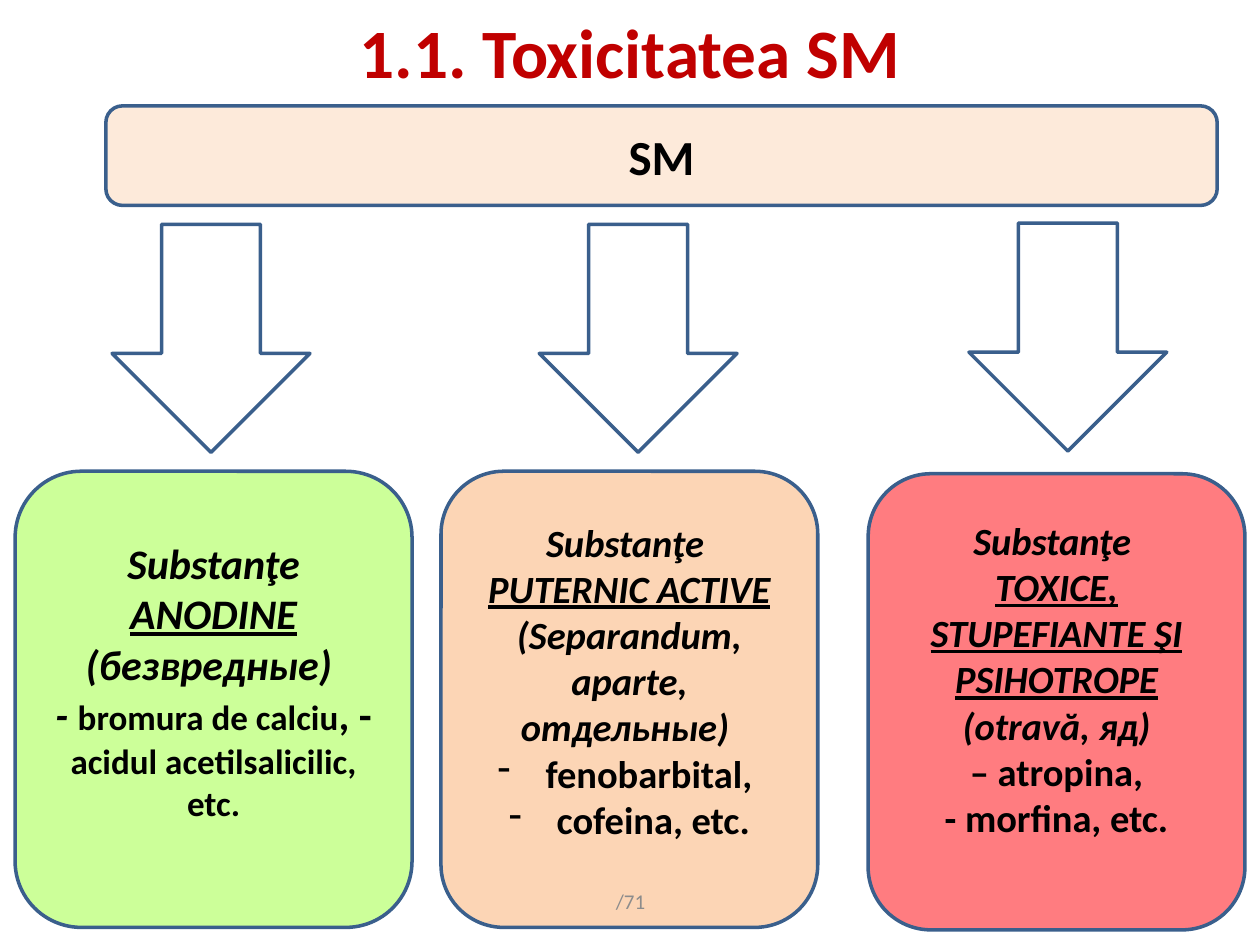
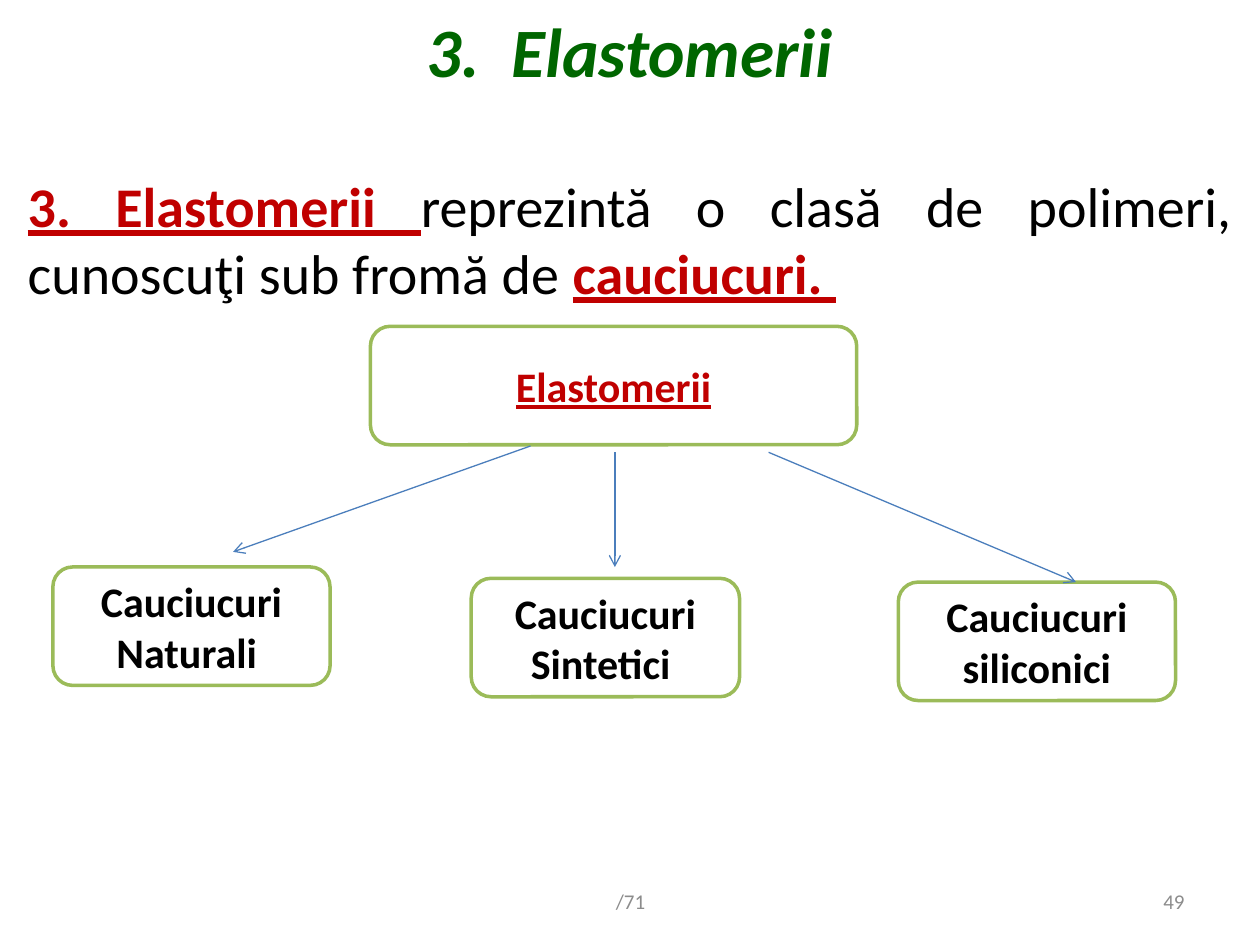
from lxml import etree
from pptx import Presentation
from pptx.dml.color import RGBColor
from pptx.enum.shapes import MSO_CONNECTOR, MSO_SHAPE as SHAPE
from pptx.enum.text import MSO_ANCHOR as ANCHOR, MSO_AUTO_SIZE as AUTO, PP_ALIGN as ALIGN
from pptx.oxml.ns import qn
from pptx.util import Inches, Pt

FONT = "Calibri"
BLACK = RGBColor(0x00, 0x00, 0x00)
WHITE = RGBColor(0xFF, 0xFF, 0xFF)
RED = RGBColor(0xC0, 0x00, 0x00)
DARK_GREEN = RGBColor(0x00, 0x66, 0x00)
GREY = RGBColor(0x8C, 0x8C, 0x8C)
BLUE_LINE = RGBColor(0x3A, 0x5F, 0x8C)
ARROW_BLUE = RGBColor(0x4B, 0x7E, 0xBC)
GREEN_LINE = RGBColor(0x9B, 0xBB, 0x59)
CREAM = RGBColor(0xFD, 0xEA, 0xDA)
LIME = RGBColor(0xCC, 0xFF, 0x99)
PEACH = RGBColor(0xFC, 0xD5, 0xB5)
CORAL = RGBColor(0xFF, 0x7C, 0x80)

# Run styles
BOLD = dict(bold=True)
SLANT = dict(bold=True, italic=True)
KEY = dict(bold=True, italic=True, underline=True)
SMALL = dict(bold=True, size=20)
TERM = dict(bold=True, underline=True, color=RED)

FOOTER = "/71"
FOOTER_TOP, FOOTER_HEIGHT = 6.95, 0.4

# Each paragraph is a list of (text, style) runs
SM_BOX = (0.84, 0.84, 8.82, 0.79)
ARROW_SIZE = (1.57, 1.81)
ARROW_SPOTS = [(0.89, 1.78), (4.28, 1.78), (7.69, 1.77)]
CLASS_HEIGHT = 3.62
# left, top, width, fill, text size, bottom margin, dashed-list start, paragraphs
CLASSES = [
    (0.12, 3.74, 3.15, LIME, 24, 0.35, None, [
        [("Substanţe ", SLANT), ("ANODINE ", KEY), ("(безвредные) ", SLANT)],
        [("- ", SLANT), ("bromura de calciu", SMALL), (", - ", BOLD),
         ("acidul acetilsalicilic, etc.", SMALL)],
    ]),
    (3.5, 3.74, 2.99, PEACH, 22, 0.35, 3, [
        [("Substanţe ", SLANT)],
        [("PUTERNIC ACTIVE", KEY)],
        [("(Separandum, aparte, отдельные) ", SLANT)],
        [("fenobarbital, ", BOLD)],
        [("cofeina, etc.", BOLD)],
    ]),
    (6.89, 3.76, 2.99, CORAL, 22, 0.42, None, [
        [("Substanţe ", SLANT)],
        [("TOXICE, STUPEFIANTE ŞI PSIHOTROPE ", KEY), ("(otravă, яд)", SLANT)],
        [("– atropina,", BOLD)],
        [("- morfina, etc.", BOLD)],
    ]),
]

DEFINITION = [
    ("3. Elastomerii ", TERM),
    ("reprezintă o clasă de polimeri, cunoscuţi sub fromă de ", {}),
    ("cauciucuri. ", TERM),
]
RUBBER_HEIGHT = 0.94
# left, top, width, text, style
RUBBERS = [
    (2.94, 2.59, 3.86, "Elastomerii", TERM),
    (0.42, 4.5, 2.2, "Cauciucuri Naturali ", BOLD),
    (3.74, 4.59, 2.13, "Cauciucuri Sintetici ", BOLD),
    (7.13, 4.62, 2.2, "Cauciucuri siliconici", BOLD),
]
BRANCHES = [(4.21, 3.54, 1.85, 4.38), (4.88, 3.59, 4.88, 4.5), (6.1, 3.59, 8.54, 4.62)]


def add_runs(p, runs, size, align=ALIGN.CENTER):
    p.alignment = align
    for text, style in runs:
        r = p.add_run()
        r.text = text
        f = r.font
        f.name = FONT
        f.size = Pt(style.get("size", size))
        f.bold = style.get("bold", False)
        f.italic = style.get("italic", False)
        f.underline = style.get("underline", False)
        f.color.rgb = style.get("color", BLACK)


def set_bullet(p, char=None, indent=0):
    """Give a paragraph a hanging bullet, or none when char is missing."""
    pPr = p._p.get_or_add_pPr()
    pPr.set("marL", str(Inches(indent)))
    pPr.set("indent", str(-Inches(indent)))
    if char:
        etree.SubElement(pPr, qn("a:buChar")).set("char", char)
    else:
        etree.SubElement(pPr, qn("a:buNone"))


def place(sp, box):
    sp.left, sp.top, sp.width, sp.height = map(Inches, box)


def add_title(slide, box, text, style):
    place(slide.shapes.title, box)
    tf = slide.shapes.title.text_frame
    tf.auto_size = AUTO.NONE
    tf.vertical_anchor = ANCHOR.MIDDLE
    add_runs(tf.paragraphs[0], [(text, style)], 39.6)


def add_box(slide, kind, box, fill, line, paragraphs=(), size=24):
    sp = slide.shapes.add_shape(kind, *map(Inches, box))
    sp.shadow.inherit = False
    sp.fill.solid()
    sp.fill.fore_color.rgb = fill
    sp.line.color.rgb = line
    sp.line.width = Pt(2)
    tf = sp.text_frame
    tf.word_wrap = True
    tf.vertical_anchor = ANCHOR.MIDDLE
    for i, runs in enumerate(paragraphs):
        add_runs(tf.add_paragraph() if i else tf.paragraphs[0], runs, size)
    return sp


def add_arrow(slide, ends):
    cn = slide.shapes.add_connector(MSO_CONNECTOR.STRAIGHT, *map(Inches, ends))
    cn.line.color.rgb = ARROW_BLUE
    cn.line.width = Pt(0.75)
    spPr = cn._element.spPr
    etree.SubElement(spPr.find(qn("a:ln")), qn("a:tailEnd")).set("type", "arrow")
    etree.SubElement(spPr, qn("a:effectLst"))


def add_footer(slide, left, width, text, align=ALIGN.CENTER):
    box = (left, FOOTER_TOP, width, FOOTER_HEIGHT)
    tf = slide.shapes.add_textbox(*map(Inches, box)).text_frame
    tf.word_wrap = True
    tf.vertical_anchor = ANCHOR.MIDDLE
    add_runs(tf.paragraphs[0], [(text, dict(color=GREY))], 12, align)


def add_page_total(slide):
    add_footer(slide, 3.42, 3.17, FOOTER)


def build_toxicity(prs):
    slide = prs.slides.add_slide(prs.slide_layouts[5])
    add_title(slide, (0.5, 0.13, 9, 0.54), "1.1. Toxicitatea SM", dict(bold=True, color=RED))
    add_box(slide, SHAPE.FLOWCHART_ALTERNATE_PROCESS, SM_BOX, CREAM, BLUE_LINE,
            [[("SM", BOLD)]], 28)
    for spot in ARROW_SPOTS:
        add_box(slide, SHAPE.DOWN_ARROW, spot + ARROW_SIZE, WHITE, BLUE_LINE)
    for left, top, width, fill, size, margin, list_start, paragraphs in CLASSES:
        sp = add_box(slide, SHAPE.ROUNDED_RECTANGLE, (left, top, width, CLASS_HEIGHT),
                     fill, BLUE_LINE, paragraphs, size)
        sp.text_frame.margin_bottom = Inches(margin)
        if list_start is not None:
            for p in sp.text_frame.paragraphs[list_start:]:
                set_bullet(p, "-", 0.38)
    add_page_total(slide)


def build_elastomers(prs):
    slide = prs.slides.add_slide(prs.slide_layouts[1])
    add_title(slide, (0.5, 0.05, 9, 0.69), "3.  Elastomerii",
              dict(bold=True, italic=True, color=DARK_GREEN))
    body = slide.placeholders[1]
    place(body, (0.12, 1.31, 9.76, 5.91))
    p = body.text_frame.paragraphs[0]
    add_runs(p, DEFINITION, 32, ALIGN.JUSTIFY)
    set_bullet(p)
    add_footer(slide, 7.17, 2.33, "49", ALIGN.RIGHT)
    for left, top, width, text, style in RUBBERS:
        add_box(slide, SHAPE.ROUNDED_RECTANGLE, (left, top, width, RUBBER_HEIGHT),
                WHITE, GREEN_LINE, [[(text, style)]])
    for ends in BRANCHES:
        add_arrow(slide, ends)
    add_page_total(slide)


def main():
    prs = Presentation()
    prs.slide_width, prs.slide_height = Inches(10), Inches(7.5)
    build_toxicity(prs)
    build_elastomers(prs)
    prs.save("out.pptx")


if __name__ == "__main__":
    main()
